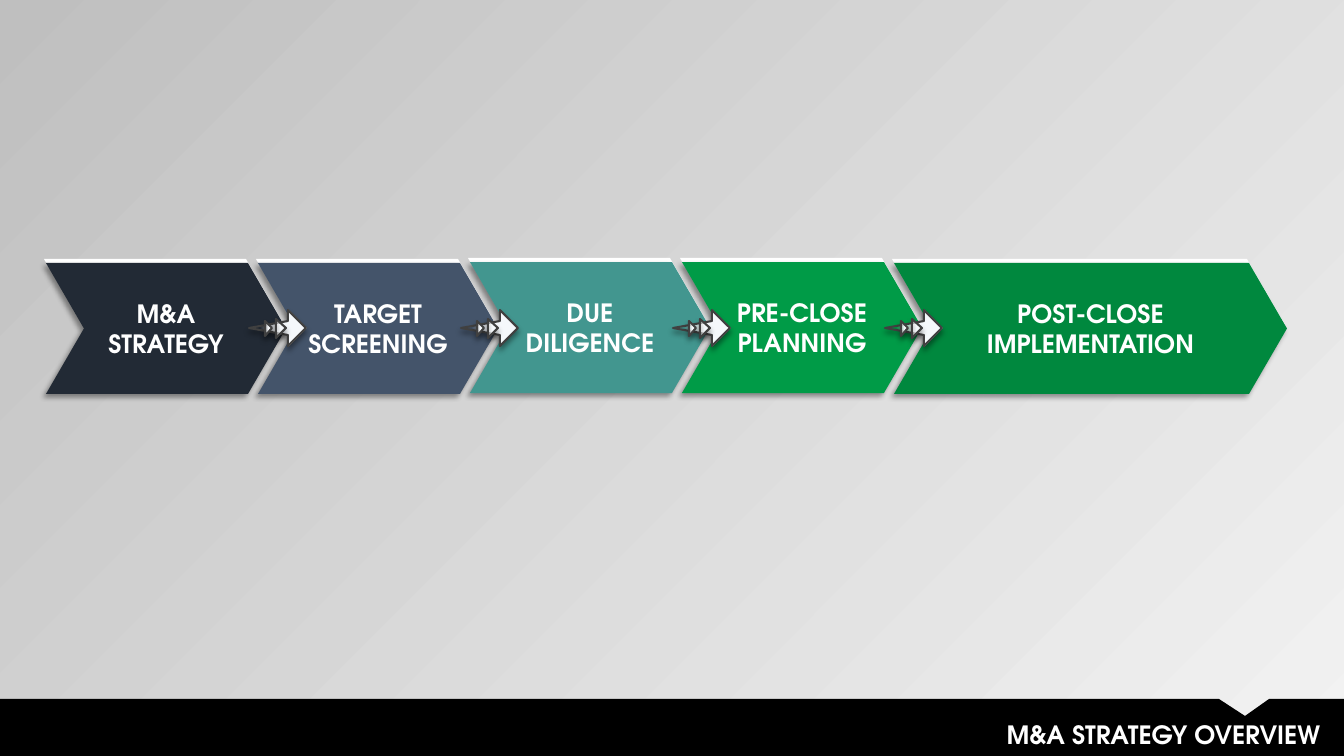
from lxml.etree import SubElement
from pptx import Presentation
from pptx.dml.color import RGBColor
from pptx.enum.shapes import MSO_SHAPE
from pptx.enum.text import MSO_ANCHOR, PP_ALIGN
from pptx.oxml.ns import qn
from pptx.util import Pt

SCALE = 12192000 / 1344
FONT = "TeX Gyre Adventor"
STEP, TALL, TIP = 212, 131, 38
STAGES = [
    ("M&A\nSTRATEGY", "222A35", 263, 240),
    ("TARGET SCREENING", "44546A", 263, 240),
    ("DUE DILIGENCE", "42968F", 262, 240),
    ("PRE-CLOSE PLANNING", "009B47", 262, 240),
    ("POST-CLOSE IMPLEMENTATION", "00883E", 263, 393),
]
ARROW = [
    ([(39, 25), (39, 36), (57, 18), (39, 0), (39, 11), (0, 18)], 0.2, 0),
    ([(27, 28), (37, 18), (27, 9)], 0, 20),
    ([(16, 26), (23, 18), (16, 11)], 0, 20),
]


def px(count):
    """Turn px into EMU."""
    return round(count * SCALE)


def rgb(code):
    """Turn a hex string into a colour."""
    return RGBColor.from_string(code)


def paint(shape, code):
    """Give a shape a plain fill, no line and no shadow."""
    shape.shadow.inherit = False
    shape.fill.solid()
    shape.fill.fore_color.rgb = rgb(code)
    shape.line.fill.background()


def blend(fill, stops, angle):
    """Fill with a gradient between two stops."""
    fill.gradient()
    fill.gradient_angle = angle
    for stop, (place, code) in zip(fill.gradient_stops, stops):
        stop.position = place
        stop.color.rgb = rgb(code)


def fade(color, percent):
    """Set the opacity of a colour element."""
    SubElement(color, qn("a:alpha"), val=str(percent * 1000))


def shade(shape, angle):
    """Add a soft black shadow."""
    shape.shadow.inherit = False
    effects = shape._element.spPr.find(qn("a:effectLst"))
    outer = SubElement(effects, qn("a:outerShdw"), blurRad=str(Pt(4)),
                       dist=str(Pt(3)), dir=str(angle * 60000),
                       algn="ctr", rotWithShape="0")
    fade(SubElement(outer, qn("a:srgbClr"), val="000000"), 40)


def outline(shapes, left, top, points):
    """Draw a closed outline from points relative to its box."""
    spots = [(px(left + x), px(top + y)) for x, y in points]
    builder = shapes.build_freeform(*spots[0], scale=1.0)
    builder.add_line_segments(spots[1:], close=True)
    return builder.convert_to_shape()


def write(shape, text, align):
    """Put bold white text into a shape."""
    frame = shape.text_frame
    frame.word_wrap = True
    frame.text = text
    for line in frame.paragraphs:
        line.alignment = align
        for run in line.runs:
            run.font.name = FONT
            run.font.size = Pt(18)
            run.font.bold = True
            run.font.color.rgb = rgb("FFFFFF")


def add_edge(shapes, left, top, width):
    """Draw the white edge behind a stage."""
    mid = TALL / 2
    points = [(0, 0), (width - TIP, 0), (width, mid),
              (width - TIP, TALL), (TIP, mid)]
    paint(outline(shapes, left, top, points), "FFFFFF")


def add_stage(shapes, left, top, width, text, code):
    """Draw one stage chevron."""
    stage = shapes.add_shape(MSO_SHAPE.CHEVRON, px(left), px(top),
                             px(width), px(TALL))
    stage.adjustments[0] = TIP / TALL
    paint(stage, code)
    shade(stage, 135)
    stage.text_frame.vertical_anchor = MSO_ANCHOR.MIDDLE
    write(stage, text, PP_ALIGN.CENTER)


def add_arrow(shapes, left, top):
    """Draw a fading arrow made of three heads."""
    group = shapes.add_group_shape()
    for points, start, clear in ARROW:
        head = outline(group.shapes, left, top, points)
        blend(head.fill, [(start, "FFFFFF"), (0.49, "F7FAFD")], 0)
        fade(head._element.xpath(".//a:gs[1]/a:srgbClr")[0], clear)
        head.line.color.rgb = rgb("404040")
        head.line.width = Pt(1.47)
        shade(head, 90)


def add_footer(shapes, top, width, height):
    """Draw the notched black bar and the slide title."""
    points = [(0, 0), (1219, 0), (1245, 17), (1269, 0),
              (width, 0), (width, height), (0, height)]
    paint(outline(shapes, 0, top, points), "000000")
    title = shapes.add_textbox(px(417), px(top + 15), px(913), px(40))
    write(title, "M&A STRATEGY OVERVIEW", PP_ALIGN.RIGHT)


def add_flow(shapes, left):
    """Draw the stages and the arrows between them."""
    for index, (text, code, top, width) in enumerate(STAGES):
        add_stage(shapes, left + index * STEP, top, width, text, code)
    for index in range(len(STAGES) - 1):
        add_arrow(shapes, left + 203 + index * STEP, 310)


def main():
    """Build and save the slide."""
    deck = Presentation()
    deck.slide_width, deck.slide_height = px(1344), px(756)
    slide = deck.slides.add_slide(deck.slide_layouts[6])
    blend(slide.background.fill, [(0, "F2F2F2"), (1, "BFBFBF")], 135)
    for index, (_, _, top, width) in enumerate(STAGES):
        add_edge(slide.shapes, 44 + index * STEP, top - 4, width)
    add_footer(slide.shapes, 699, 1344, 57)
    add_flow(slide.shapes, 46)
    deck.save("out.pptx")


if __name__ == "__main__":
    main()
